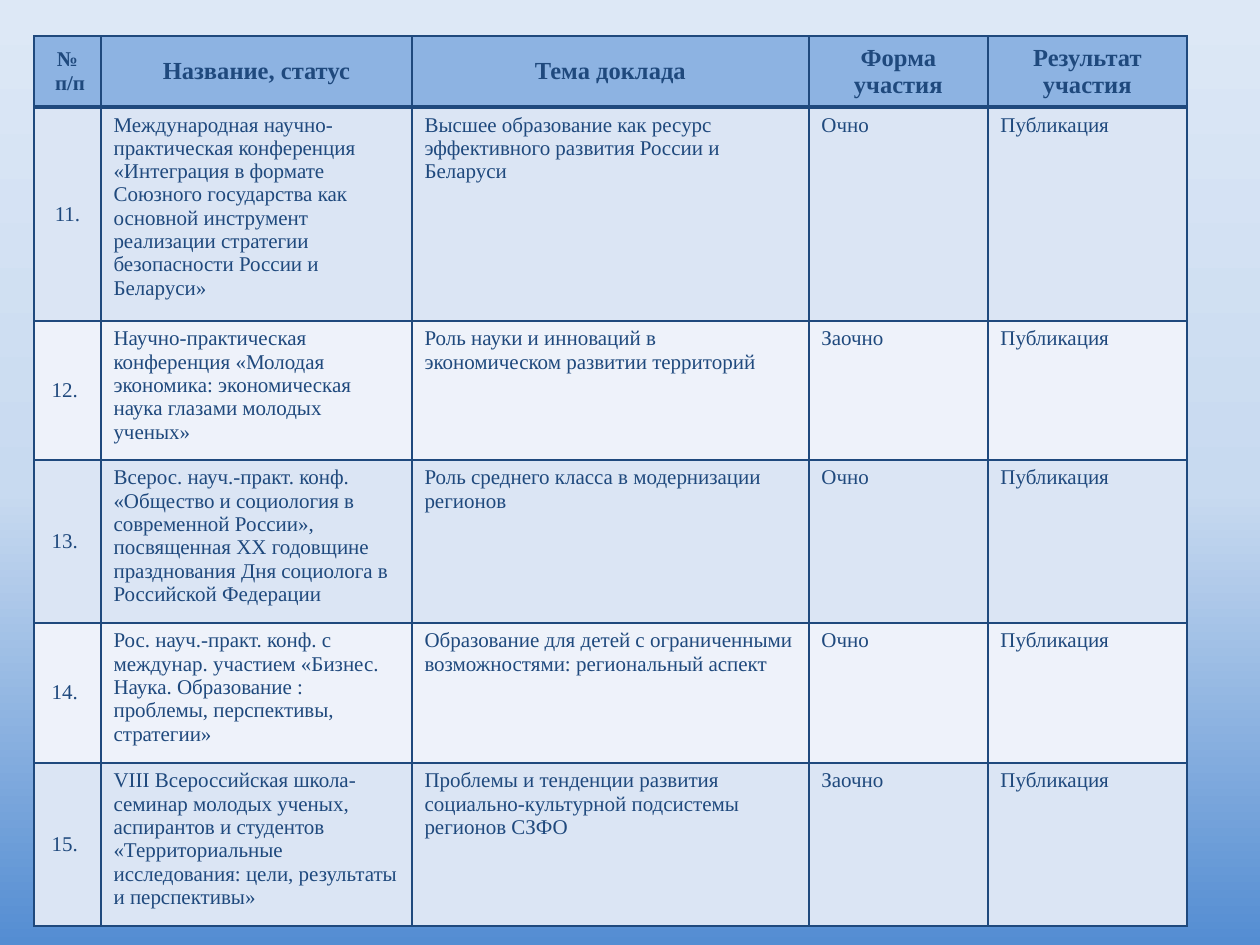
from copy import deepcopy

from pptx import Presentation
from pptx.dml.color import RGBColor
from pptx.enum.text import MSO_ANCHOR as Anchor, PP_ALIGN as Align
from pptx.oxml import parse_xml
from pptx.oxml.ns import nsdecls, qn
from pptx.util import Pt

PX = 914400 // 126
FONT = "Times New Roman"
NAVY = RGBColor(0x1F, 0x49, 0x7D)
HEAD = RGBColor(0x8D, 0xB3, 0xE2)
BANDS = (RGBColor(0xDB, 0xE5, 0xF4), RGBColor(0xEE, 0xF2, 0xFA))
STOPS = (
    (0, RGBColor(0x54, 0x8D, 0xD2)),
    (0.48, RGBColor(0xC8, 0xDA, 0xF0)),
    (1, RGBColor(0xDD, 0xE8, 0xF6)),
)

LEFT, TOP = 34, 36
COLS = (67, 311, 397, 179, 199)
ROWS = (71, 214, 139, 163, 140, 163)

TITLES = ("№\n п/п", "Название, статус", "Тема доклада",
          "Форма участия", "Результат участия")
TALKS = (
    ("11.",
     "Международная научно-практическая конференция «Интеграция в формате "
     "Союзного государства как основной инструмент реализации стратегии "
     "безопасности России и Беларуси»",
     "Высшее образование как ресурс эффективного развития России и Беларуси",
     "Очно", "Публикация"),
    ("12. ",
     "Научно-практическая конференция «Молодая экономика: экономическая "
     "наука глазами молодых ученых»",
     "Роль науки и инноваций в экономическом развитии территорий",
     "Заочно", "Публикация"),
    ("13. ",
     "Всерос. науч.-практ. конф. «Общество и социология в современной "
     "России», посвященная XX годовщине празднования Дня социолога в "
     "Российской Федерации",
     "Роль среднего класса в модернизации регионов",
     "Очно", "Публикация"),
    ("14. ",
     "Рос. науч.-практ. конф. с междунар. участием «Бизнес. Наука. "
     "Образование : проблемы, перспективы, стратегии»",
     "Образование для детей с ограниченными возможностями: "
     "региональный аспект",
     "Очно", "Публикация"),
    ("15. ",
     "VIII Всероссийская школа-семинар молодых ученых, аспирантов и "
     "студентов «Территориальные исследования: цели, результаты и "
     "перспективы»",
     "Проблемы и тенденции развития социально-культурной подсистемы "
     "регионов СЗФО",
     "Заочно", "Публикация"),
)


def paint_back(slide):
    fill = slide.background.fill
    fill.gradient()
    fill.gradient_angle = 90
    stops = slide.element.find(".//" + qn("a:gsLst"))
    stops.append(deepcopy(stops[-1]))
    for stop, (place, color) in zip(fill.gradient_stops, STOPS):
        stop.position = place
        stop.color.rgb = color


def put_text(cell, text, size=12, bold=False, align=Align.LEFT,
             anchor=Anchor.TOP):
    cell.vertical_anchor = anchor
    cell.text = text
    for par in cell.text_frame.paragraphs:
        par.alignment = align
        for run in par.runs:
            font = run.font
            font.name, font.size, font.bold = FONT, Pt(size), bold
            font.color.rgb = NAVY


def set_edges(cell, top=1, base=1):
    """Draw the four borders; they must precede the fill in the cell XML."""
    props = cell._tc.get_or_add_tcPr()
    widths = {"lnL": 1, "lnR": 1, "lnT": top, "lnB": base}
    for i, (tag, width) in enumerate(widths.items()):
        props.insert(i, parse_xml(
            f'<a:{tag} {nsdecls("a")} w="{Pt(width)}"><a:solidFill>'
            f'<a:srgbClr val="{NAVY}"/></a:solidFill></a:{tag}>'))


def fill_cell(cell, color, text, top=1, base=1, **style):
    cell.fill.solid()
    cell.fill.fore_color.rgb = color
    put_text(cell, text, **style)
    set_edges(cell, top, base)


def add_talks(slide):
    table = slide.shapes.add_table(
        len(ROWS), len(COLS), LEFT * PX, TOP * PX,
        sum(COLS) * PX, sum(ROWS) * PX).table
    for col, width in zip(table.columns, COLS):
        col.width = width * PX
    for row, height in zip(table.rows, ROWS):
        row.height = height * PX

    mid = {"align": Align.CENTER, "anchor": Anchor.MIDDLE}
    for c, text in enumerate(TITLES):
        fill_cell(table.cell(0, c), HEAD, text, base=3,
                  size=14 if c else 12, bold=True, **mid)
    for r, talk in enumerate(TALKS, 1):
        for c, text in enumerate(talk):
            fill_cell(table.cell(r, c), BANDS[(r - 1) % 2], text,
                      top=3 if r == 1 else 1, **({} if c else mid))


def main():
    deck = Presentation()
    deck.slide_width, deck.slide_height = 1260 * PX, 945 * PX
    slide = deck.slides.add_slide(deck.slide_layouts[6])
    paint_back(slide)
    add_talks(slide)
    deck.save("out.pptx")


if __name__ == "__main__":
    main()
